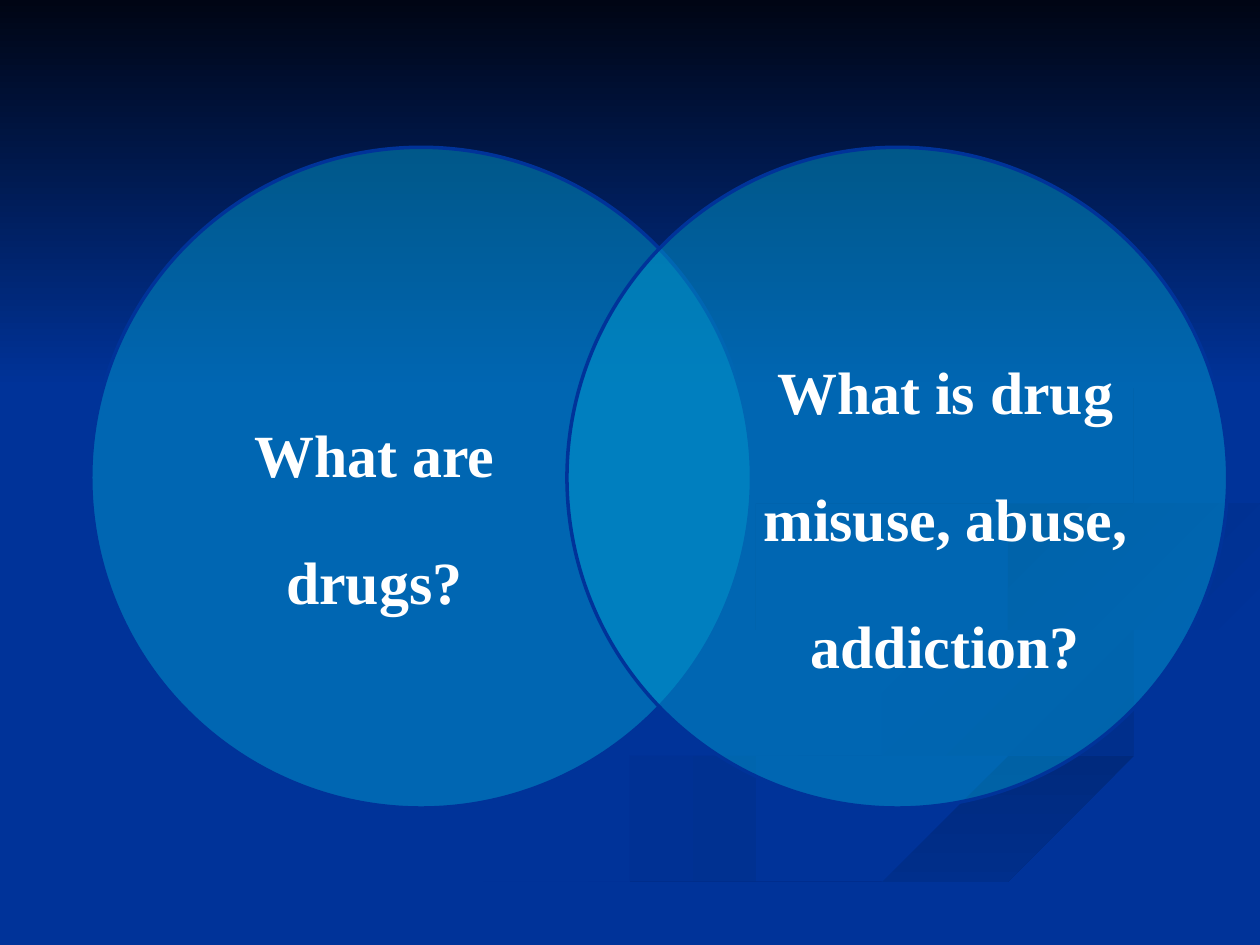
from lxml.etree import SubElement
from pptx import Presentation
from pptx.dml.color import RGBColor
from pptx.enum.shapes import MSO_SHAPE
from pptx.enum.text import MSO_ANCHOR, PP_ALIGN
from pptx.oxml.ns import qn
from pptx.util import Cm, Pt

ROYAL = RGBColor(0x00, 0x33, 0x99)
NIGHT = RGBColor(0x00, 0x05, 0x14)
NAVY = RGBColor(0x00, 0x2F, 0x8C)
DEEP = RGBColor(0x00, 0x2A, 0x7E)
DUSK = RGBColor(0x00, 0x2D, 0x87)
SHADE = RGBColor(0x00, 0x2B, 0x82)
CYAN = RGBColor(0x00, 0x99, 0xCC)
WHITE = RGBColor(0xFF, 0xFF, 0xFF)

INCH = Cm(2.54)
CURVE_STEPS = 6
CIRCLE_TOP, CIRCLE_SIZE = 2.97, 13.32
CIRCLE_LEFT, CIRCLE_STEP = 1.83, 9.6
TEXT_LEFT, TEXT_STEP = 3.71, 11.51
QUESTIONS = ["What are drugs?", "What is drug misuse, abuse, addiction?"]


def curve(*knots):
    padded = (knots[0], *knots, knots[-1])
    points = []
    for before, start, end, after in zip(padded, padded[1:], padded[2:], padded[3:]):
        for step in range(CURVE_STEPS):
            t = step / CURVE_STEPS
            points.append(tuple(
                b + ((c - a) * t + (2 * a - 5 * b + 4 * c - d) * t ** 2
                     + (3 * b - a - 3 * c + d) * t ** 3) / 2
                for a, b, c, d in zip(before, start, end, after)))
    return points + [knots[-1]]


def back(edge):
    return edge[::-1]


left_outer = curve((5.75, 4.59), (5.7, 4.7), (5.93, 4.91), (6.79, 5.19), (7.62, 5.47),
                   (7.86, 5.66), (7.59, 5.9), (6.52, 6.21), (4.99, 6.61), (3.76, 7.07), (3, 7.49))
left_inner = curve((5.75, 4.59), (5.87, 4.81), (6.42, 5.07), (7.15, 5.28), (7.81, 5.53),
                   (8, 5.81), (7.69, 6.09), (6.51, 6.4), (4.99, 6.87), (3.61, 7.49))
bend_outer = curve((7.24, 4.64), (7.45, 4.9), (8.11, 5.15), (9.05, 5.4), (9.43, 5.7),
                   (9.26, 5.93), (8.94, 6.05))
bend_inner = curve((7.24, 4.64), (7.46, 5), (8.15, 5.3), (8.92, 5.53), (9.18, 5.81), (8.94, 6.05))
band_crest = curve((5.03, 7.49), (5.19, 7.47), (6.3, 6.93), (7.65, 6.47), (9.04, 6.1), (9.98, 5.81))
band_base = curve((5.71, 7.49), (6.49, 7.1), (7.85, 6.61), (9.98, 6.09))
main_head = curve((9.98, 3.87), (8.74, 4.08), (7.7, 4.27), (7.24, 4.64))
main_tail = curve((8.94, 6.05), (7.43, 6.43), (6.19, 6.84), (4.77, 7.49))
hook_lip = curve((9.98, 4.02), (8.65, 4.24), (8.1, 4.37), (7.81, 4.6))
hook_base = curve((7.81, 4.6), (8.17, 4.92), (9.04, 5.19), (9.98, 5.38))
hook_tip = curve((7.81, 4.6), (7.97, 4.83), (8.26, 4.96))
hook_inner = curve((8.26, 4.96), (8.05, 4.74), (8.28, 4.53), (8.96, 4.35), (9.98, 4.2))
plume_outer = curve((7.62, 2.33), (8.21, 2.61), (8.73, 2.99), (8.94, 3.44), (8.67, 3.84),
                    (7.87, 4.12), (6.83, 4.3), (6.14, 4.48), (5.93, 4.7), (6.22, 5))
plume_inner = curve((7.62, 2.33), (8.46, 2.79), (8.89, 3.35), (8.52, 3.74), (7.33, 4.04),
                    (6.05, 4.33), (5.77, 4.62), (6.22, 5))

RIBBONS = [
    (left_outer + back(left_inner), ROYAL, NAVY, 0),
    (bend_outer + back(bend_inner), ROYAL, NAVY, 45),
    (band_crest + back(band_base), DEEP, ROYAL, 90),
    (main_head + bend_outer + main_tail + band_crest + back(hook_base) + back(hook_lip),
     ROYAL, ROYAL, 0),
    (hook_lip + hook_tip + hook_inner, DUSK, ROYAL, 45),
    (plume_outer + back(plume_inner), SHADE, ROYAL, 45),
]


def apply_format(target, values):
    for name, value in values.items():
        setattr(target, name, value)


class VennPage:
    frame_format = {
        "word_wrap": True, "vertical_anchor": MSO_ANCHOR.MIDDLE,
        "margin_left": 0, "margin_right": 0, "margin_top": 0, "margin_bottom": 0,
    }
    para_format = {"alignment": PP_ALIGN.CENTER, "line_spacing": 0.9, "space_after": Pt(20.65)}
    font_format = {"name": "Times New Roman", "size": Pt(59), "bold": True}

    def __init__(self, deck):
        self.page = deck.slides.add_slide(deck.slide_layouts[6])
        background = self.page.background.fill
        background.solid()
        background.fore_color.rgb = ROYAL

    def paint_gradient(self, shape, start, end, angle):
        shape.shadow.inherit = False
        shape.line.fill.background()
        shape.fill.gradient()
        shape.fill.gradient_angle = -angle % 360
        for stop, color in zip(shape.fill.gradient_stops, (start, end)):
            stop.color.rgb = color

    def ribbon(self, outline, start, end, angle):
        builder = self.page.shapes.build_freeform(*outline[0], scale=INCH)
        builder.add_line_segments(outline[1:], close=True)
        self.paint_gradient(builder.convert_to_shape(), start, end, angle)

    def top_shade(self, width, height):
        shape = self.page.shapes.add_shape(MSO_SHAPE.RECTANGLE, 0, 0, Cm(width), Cm(height))
        self.paint_gradient(shape, NIGHT, ROYAL, 90)

    def circle(self, left):
        shape = self.page.shapes.add_shape(
            MSO_SHAPE.OVAL, Cm(left), Cm(CIRCLE_TOP), Cm(CIRCLE_SIZE), Cm(CIRCLE_SIZE))
        shape.shadow.inherit = False
        shape.fill.solid()
        shape.fill.fore_color.rgb = CYAN
        tint = shape._element.spPr.find(qn("a:solidFill")).find(qn("a:srgbClr"))
        SubElement(tint, qn("a:alpha"), val="50000")
        shape.line.color.rgb = ROYAL
        shape.line.width = Pt(2)

    def question(self, left, text):
        box = self.page.shapes.add_textbox(Cm(left), Cm(4.53), Cm(7.67), Cm(10.19))
        apply_format(box.text_frame, self.frame_format)
        para = box.text_frame.paragraphs[0]
        apply_format(para, self.para_format)
        span = para.add_run()
        span.text = text
        apply_format(span.font, self.font_format)
        span.font.color.rgb = WHITE
        span._r.get_or_add_rPr().set("baseline", "-25000")


def main():
    deck = Presentation()
    apply_format(deck, {"slide_width": Cm(25.4), "slide_height": Cm(19.05)})
    venn = VennPage(deck)
    for ribbon in RIBBONS:
        venn.ribbon(*ribbon)
    venn.top_shade(25.4, 7.82)
    for index, text in enumerate(QUESTIONS):
        venn.circle(CIRCLE_LEFT + index * CIRCLE_STEP)
        venn.question(TEXT_LEFT + index * TEXT_STEP, text)
    deck.save("out.pptx")


if __name__ == "__main__":
    main()
